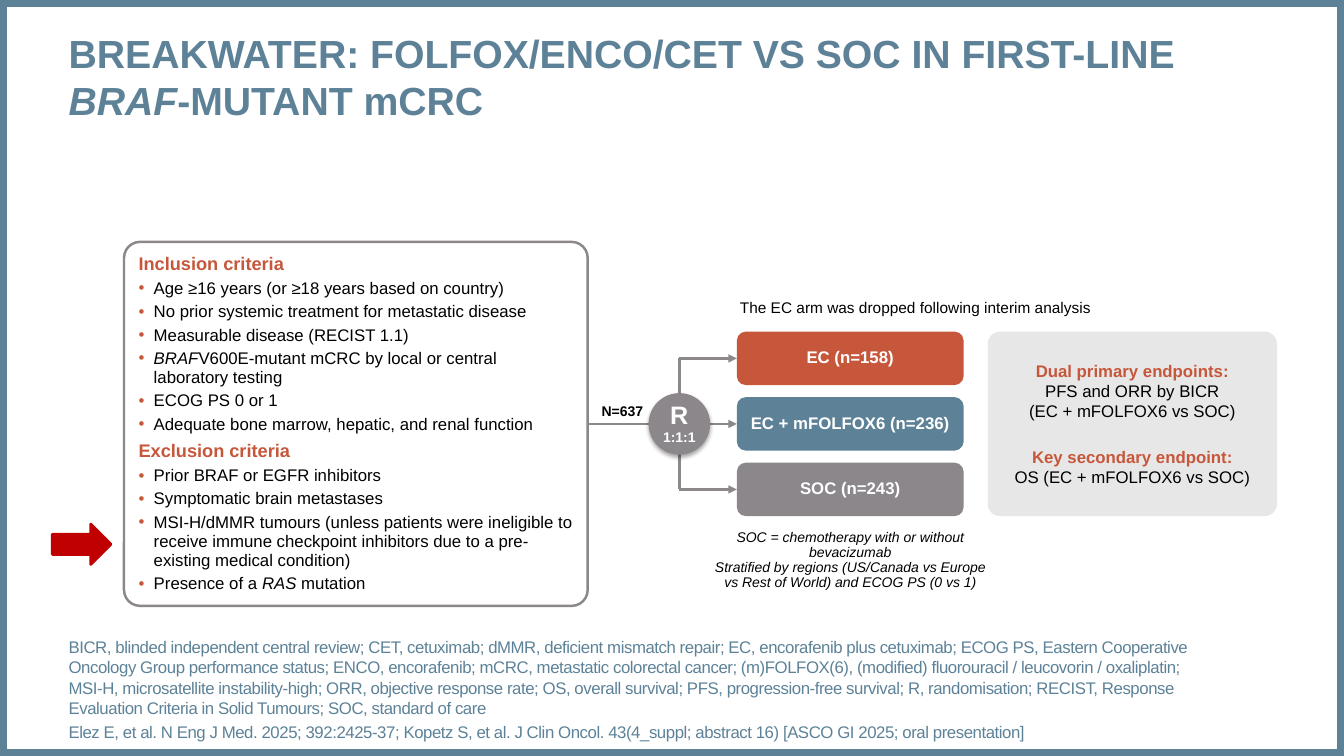
import lxml.etree
import pptx
import pptx.dml.color
import pptx.enum.shapes
import pptx.enum.text
import pptx.oxml.ns
import pptx.util

Pt = pptx.util.Pt
RGBColor = pptx.dml.color.RGBColor
Shape = pptx.enum.shapes.MSO_SHAPE
Align = pptx.enum.text.PP_ALIGN
Anchor = pptx.enum.text.MSO_ANCHOR

BLUE = RGBColor(0x5D, 0x82, 0x98)
ORANGE = RGBColor(0xC6, 0x57, 0x3B)
GREY = RGBColor(0x8B, 0x87, 0x8B)
PALE = RGBColor(0xE8, 0xE7, 0xE8)
RED = RGBColor(0xC0, 0x00, 0x00)
BLACK = RGBColor(0, 0, 0)
WHITE = RGBColor(255, 255, 255)


def add_element(parent, tag, **attributes):
    return lxml.etree.SubElement(parent, pptx.oxml.ns.qn(tag), attributes)


def write(frame, text, size=12, color=BLACK, bold=False, italic=False, align=Align.LEFT,
          line=1.0, before=0, after=0, bullet=False, tracking=0):
    """Append a paragraph; parts between asterisks are italic."""
    first = frame.paragraphs[0]
    paragraph = frame.add_paragraph() if first.runs else first
    paragraph.alignment = align
    paragraph.line_spacing = line
    paragraph.space_before, paragraph.space_after = Pt(before), Pt(after)
    if bullet:
        properties = paragraph._p.get_or_add_pPr()
        properties.set("marL", str(Pt(10.8)))
        properties.set("indent", str(Pt(-10.8)))
        add_element(add_element(properties, "a:buClr"), "a:srgbClr", val=str(ORANGE))
        add_element(properties, "a:buFont", typeface="Arial")
        add_element(properties, "a:buChar", char="•")
    for index, part in enumerate(text.split("*")):
        if not part:
            continue
        run = paragraph.add_run()
        run.text = part
        run.font.name, run.font.size = "Arial", Pt(size)
        run.font.bold, run.font.italic = bold, italic or index % 2 == 1
        run.font.color.rgb = color
        if tracking:
            run._r.get_or_add_rPr().set("spc", str(round(tracking * 100)))


class TrialSlide:
    def __init__(self, presentation):
        self.line_color = GREY
        self.slide = presentation.slides.add_slide(presentation.slide_layouts[6])

    def shape(self, kind, left, top, width, height, fill=None, line=None, weight=1, radius=None):
        shape = self.slide.shapes.add_shape(kind, Pt(left), Pt(top), Pt(width), Pt(height))
        shape.shadow.inherit = False
        if radius is not None:
            shape.adjustments[0] = radius
        if fill is None:
            shape.fill.background()
        else:
            shape.fill.solid()
            shape.fill.fore_color.rgb = fill
        if line is None:
            shape.line.fill.background()
        else:
            shape.line.color.rgb = line
            shape.line.width = Pt(weight)
        shape.text_frame.word_wrap = True
        shape.text_frame.vertical_anchor = Anchor.MIDDLE
        return shape

    def text_box(self, left, top, width, height, anchor=Anchor.TOP, wrap=True):
        box = self.slide.shapes.add_textbox(Pt(left), Pt(top), Pt(width), Pt(height))
        frame = box.text_frame
        frame.word_wrap, frame.vertical_anchor = wrap, anchor
        frame.margin_left = frame.margin_right = frame.margin_top = frame.margin_bottom = 0
        return frame

    def connector(self, x1, y1, x2, y2, start=None, end=None):
        straight = pptx.enum.shapes.MSO_CONNECTOR.STRAIGHT
        connector = self.slide.shapes.add_connector(straight, Pt(x1), Pt(y1), Pt(x2), Pt(y2))
        connector.line.color.rgb = self.line_color
        connector.line.width = Pt(2)
        if start is not None:
            connector.begin_connect(start, 3)
        if end is not None:
            connector.end_connect(end, 1)
            add_element(connector.line._get_or_add_ln(), "a:tailEnd", type="triangle")
        add_element(connector._element.spPr, "a:effectLst")
        return connector

    def soft_shadow(self, shape):
        effects = shape._element.spPr.find(pptx.oxml.ns.qn("a:effectLst"))
        shadow = add_element(effects, "a:outerShdw", blurRad=str(Pt(3.1)), dist=str(Pt(1.8)),
                             dir="5400000", algn="t", rotWithShape="0")
        add_element(add_element(shadow, "a:srgbClr", val="000000"), "a:alpha", val="35000")


def main():
    presentation = pptx.Presentation()
    presentation.slide_width, presentation.slide_height = Pt(960), Pt(540)
    page = TrialSlide(presentation)

    # Frame, title and marker arrow
    page.shape(Shape.RECTANGLE, 0, 0, 960, 540, line=BLUE, weight=10)
    title = page.text_box(49, 20.2, 863.3, 68.4, Anchor.MIDDLE)
    write(title, "BREAKWATER: FOLFOX/ENCO/CET VS SOC IN FIRST-LINE *BRAF*-MUTANT mCRC",
          size=28, color=BLUE, bold=True)
    page.shape(Shape.RIGHT_ARROW, 37.4, 374.4, 41.8, 28.8, RED, RED, 2)

    # Eligibility criteria
    criteria = page.shape(Shape.ROUNDED_RECTANGLE, 88.6, 172.8, 331.2, 260, WHITE, GREY, 1.75, 0.044)
    sections = {
        "Inclusion criteria": [
            "Age ≥16 years (or ≥18 years based on country)",
            "No prior systemic treatment for metastatic disease",
            "Measurable disease (RECIST 1.1)",
            "*BRAF*V600E-mutant mCRC by local or central laboratory testing",
            "ECOG PS 0 or 1",
            "Adequate bone marrow, hepatic, and renal function"],
        "Exclusion criteria": [
            "Prior BRAF or EGFR inhibitors",
            "Symptomatic brain metastases",
            "MSI-H/dMMR tumours (unless patients were ineligible to receive immune "
            "checkpoint inhibitors due to a pre-existing medical condition)",
            "Presence of a *RAS* mutation"]}
    for number, (heading, items) in enumerate(sections.items()):
        write(criteria.text_frame, heading, size=13, color=ORANGE, bold=True, line=0.95,
              before=2 * number, after=3)
        for item in items:
            write(criteria.text_frame, item, line=0.95, after=3, bullet=True)

    # Treatment arms
    arms = []
    for row, (label, color) in enumerate([("EC (n=158)", ORANGE), ("EC + mFOLFOX6 (n=236)", BLUE),
                                          ("SOC (n=243)", GREY)]):
        arm = page.shape(Shape.ROUNDED_RECTANGLE, 526.3, 236.9 + 46.8 * row, 162, 38.2, color,
                         radius=0.169)
        write(arm.text_frame, label, color=WHITE, bold=True, align=Align.CENTER, line=0.9)
        arms.append(arm)

    # Randomisation
    trunk, upper, middle, lower = 485.3, 256, 302.8, 349.6
    page.connector(trunk, upper, trunk, lower)
    page.connector(trunk, upper, 526.3, upper, end=arms[0])
    page.connector(419.8, middle, 526.3, middle, start=criteria, end=arms[1])
    page.connector(trunk, lower, 526.3, lower, end=arms[2])
    circle = page.shape(Shape.OVAL, trunk - 22, middle - 22, 44, 44, GREY)
    page.soft_shadow(circle)
    circle.text_frame.margin_left = circle.text_frame.margin_right = 0
    for label, size in [("R", 18), ("1:1:1", 10)]:
        write(circle.text_frame, label, size=size, color=WHITE, bold=True, align=Align.CENTER, line=0.9)
    patients = page.text_box(420.5, 288.7, 48.2, 10.8)
    write(patients, "N=637", size=10, bold=True, align=Align.CENTER, line=0.9)

    # Notes on the arms
    dropped = page.text_box(528.5, 213.1, 262, 13.7, wrap=False)
    write(dropped, "The EC arm was dropped following interim analysis", size=11)
    regimen = page.text_box(501.1, 378.7, 212.4, 43.9)
    for note in ["SOC = chemotherapy with or without bevacizumab",
                 "Stratified by regions (US/Canada vs Europe",
                 "vs Rest of World) and ECOG PS (0 vs 1)"]:
        write(regimen, note, size=10, italic=True, align=Align.CENTER, line=0.9)

    # Endpoints
    endpoints = page.shape(Shape.ROUNDED_RECTANGLE, 705.6, 236.9, 206.6, 131.8, PALE, radius=0.067)
    groups = [("Dual primary endpoints:", ["PFS and ORR by BICR", "(EC + mFOLFOX6 vs SOC)"]),
              ("Key secondary endpoint:", ["OS (EC + mFOLFOX6 vs SOC)"])]
    for number, (heading, lines) in enumerate(groups):
        write(endpoints.text_frame, heading, color=ORANGE, bold=True, align=Align.CENTER,
              before=18 * number)
        for line in lines:
            write(endpoints.text_frame, line, align=Align.CENTER)

    # Abbreviations and references
    footnotes = page.text_box(49, 478.1, 808.6, 28.8, Anchor.MIDDLE)
    abbreviations = (
        "BICR, blinded independent central review; CET, cetuximab; dMMR, deficient mismatch repair; "
        "EC, encorafenib plus cetuximab; ECOG PS, Eastern Cooperative Oncology Group performance "
        "status; ENCO, encorafenib; mCRC, metastatic colorectal cancer; (m)FOLFOX(6), (modified) "
        "fluorouracil / leucovorin / oxaliplatin; MSI-H, microsatellite instability-high; "
        "ORR, objective response rate; OS, overall survival; PFS, progression-free survival; "
        "R, randomisation; RECIST, Response Evaluation Criteria in Solid Tumours; "
        "SOC, standard of care")
    references = ("Elez E, et al. N Eng J Med. 2025; 392:2425-37; Kopetz S, et al. J Clin Oncol. "
                  "43(4_suppl; abstract 16) [ASCO GI 2025; oral presentation]")
    for number, text in enumerate([abbreviations, references]):
        write(footnotes, text, color=BLUE, before=3 * number, tracking=-0.3)

    presentation.save("out.pptx")


if __name__ == "__main__":
    main()
